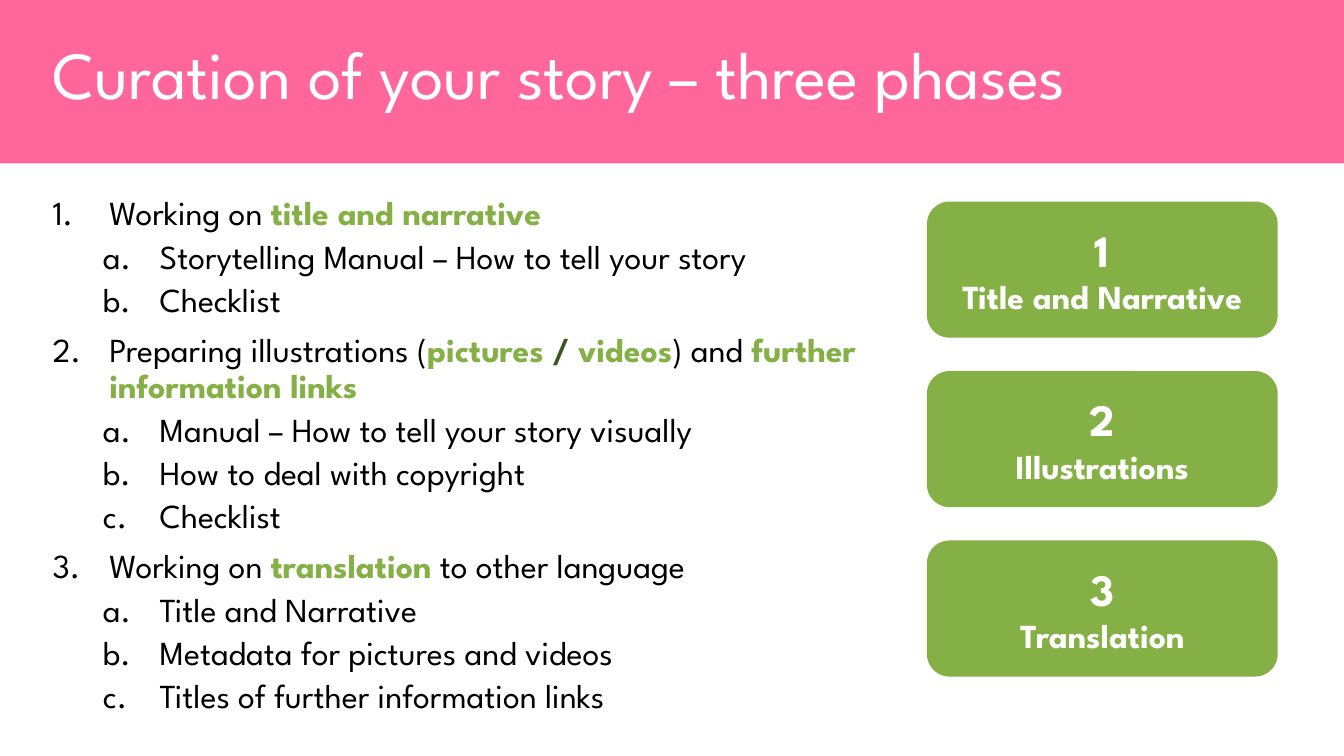
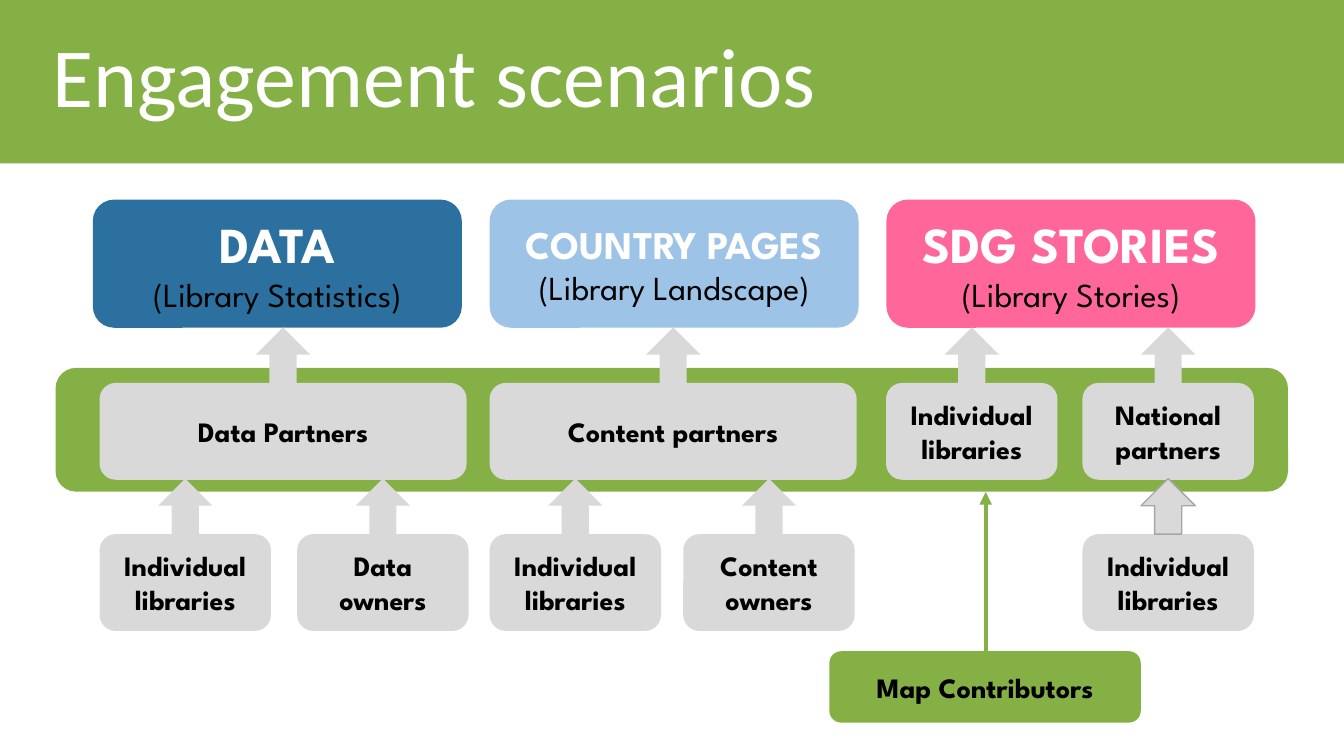
from lxml import etree
from pptx import Presentation
from pptx.dml.color import RGBColor
from pptx.enum import shapes as sh, text as tx
from pptx.oxml import ns
from pptx.util import Cm, Pt

# Colours and fonts
PINK = RGBColor(0xFF, 0x66, 0x99)
GREEN = RGBColor(0x85, 0xB0, 0x46)
FOREST = RGBColor(0x38, 0x57, 0x23)
BLUE = RGBColor(0x2B, 0x70, 0x9E)
SKY = RGBColor(0x9D, 0xC3, 0xE6)
GREY = RGBColor(0xD9, 0xD9, 0xD9)
EDGE = RGBColor(0xA6, 0xA6, 0xA6)
BLACK = RGBColor(0, 0, 0)
WHITE = RGBColor(0xFF, 0xFF, 0xFF)
SPARTAN = "League Spartan"
WIDE, HIGH = 33.87, 19.05

# Each item: level, then plain text or (text, colour) for bold words
PHASES = [
    (0, "Working on ", ("title and narrative", GREEN)),
    (1, "Storytelling Manual – How to tell your story"),
    (1, "Checklist"),
    (0, "Preparing illustrations (", ("pictures", GREEN), (" / ", FOREST),
     ("videos", GREEN), ") and ", ("further information links", GREEN)),
    (1, "Manual – How to tell your story visually"),
    (1, "How to deal with copyright"),
    (1, "Checklist"),
    (0, "Working on ", ("translation", GREEN), " to other language"),
    (1, "Title and Narrative"),
    (1, "Metadata for pictures and videos"),
    (1, "Titles of further information links"),
]


def style(font, size, color, bold=False, name=SPARTAN):
    font.name, font.size, font.bold = name, Pt(size), bold
    font.color.rgb = color


def place(item, left, top, width, height):
    item.left, item.top = Cm(left), Cm(top)
    item.width, item.height = Cm(width), Cm(height)


def add_box(slide, kind, left, top, width, height, fill, lines=()):
    """Add a filled shape; lines holds (words, size, colour, bold)."""
    box = slide.shapes.add_shape(
        kind, Cm(left), Cm(top), Cm(width), Cm(height))
    box.shadow.inherit = False
    box.fill.solid()
    box.fill.fore_color.rgb = fill
    box.line.fill.background()
    frame = box.text_frame
    frame.word_wrap = True
    frame.vertical_anchor = tx.MSO_ANCHOR.MIDDLE
    for i, (words, *look) in enumerate(lines):
        par = frame.add_paragraph() if i else frame.paragraphs[0]
        par.text = words
        par.alignment = tx.PP_ALIGN.CENTER
        style(par.font, *look)
    return box


def add_round(slide, *args):
    return add_box(slide, sh.MSO_SHAPE.ROUNDED_RECTANGLE, *args)


def add_up(slide, mid, top):
    width = 1.37
    return add_box(slide, sh.MSO_SHAPE.UP_ARROW, mid - width / 2, top,
                   width, 1.4, GREY)


def add_line(slide, mid, start, end):
    line = slide.shapes.add_connector(
        sh.MSO_CONNECTOR.STRAIGHT, Cm(mid), Cm(start), Cm(mid), Cm(end))
    line.line.color.rgb = GREEN
    line.line.width = Pt(3)
    etree.SubElement(line.line._ln, ns.qn("a:tailEnd"), type="triangle")
    etree.SubElement(line._element.spPr, ns.qn("a:effectLst"))


def add_slide(deck, layout, words, band, size, name, area):
    """Start a slide with its colour band and title."""
    slide = deck.slides.add_slide(deck.slide_layouts[layout])
    back = add_box(slide, sh.MSO_SHAPE.RECTANGLE, 0, 0, WIDE, 4.12, band)
    slide.shapes._spTree.insert(2, back._element)
    title = slide.shapes.title
    place(title, *area)
    frame = title.text_frame
    frame.text = words
    frame.word_wrap = True
    frame.auto_size = tx.MSO_AUTO_SIZE.NONE
    frame.vertical_anchor = tx.MSO_ANCHOR.MIDDLE
    par = frame.paragraphs[0]
    par.alignment = tx.PP_ALIGN.LEFT
    par.line_spacing = 0.9
    style(par.font, size, WHITE, name=name)
    return slide


def number(par, level):
    """Give a paragraph its number or letter and hanging indent."""
    props = par._p.get_or_add_pPr()
    props.set("marL", str(Cm((1.43, 2.7)[level])))
    props.set("indent", str(Cm(-1.43)))
    etree.SubElement(props, ns.qn("a:buFont"), typeface=SPARTAN)
    etree.SubElement(props, ns.qn("a:buAutoNum"),
                     type=("arabicPeriod", "alphaLcPeriod")[level])


def fill_list(body, items):
    frame = body.text_frame
    frame.auto_size = tx.MSO_AUTO_SIZE.NONE
    for i, (level, *parts) in enumerate(items):
        par = frame.add_paragraph() if i else frame.paragraphs[0]
        par.level = level
        number(par, level)
        par.line_spacing = 0.9
        par.space_before = Pt((10, 5)[level])
        style(par.font, 24, BLACK)
        for part in parts:
            run = par.add_run()
            if isinstance(part, str):
                run.text = part
            else:
                run.text, run.font.color.rgb = part
                run.font.bold = True


def add_phases(deck):
    slide = add_slide(deck, 1, "Curation of your story – three phases", PINK,
                      48, SPARTAN, (1.07, 0.71, 31.14, 2.5))
    body = slide.placeholders[1]
    place(body, 1.07, 4.83, 21.67, 12.09)
    fill_list(body, PHASES)
    names = ("Title and Narrative", "Illustrations", "Translation")
    for i, name in enumerate(names):
        add_round(slide, 23.36, 5.08 + 4.27 * i, 8.84, 3.43, GREEN,
                  [(str(i + 1), 32, WHITE, True), (name, 24, WHITE, True)])


def add_roles(deck):
    slide = add_slide(deck, 5, "Engagement scenarios", GREEN,
                      60, "Calibri", (1.07, 0.51, 23.09, 3.05))

    # Three content areas
    areas = [("DATA", 36, "(Library Statistics)", BLUE),
             ("COUNTRY PAGES", 28, "(Library Landscape)", SKY),
             ("SDG STORIES", 36, "(Library Stories)", PINK)]
    for i, (head, size, sub, fill) in enumerate(areas):
        add_round(slide, 2.34 + 10 * i, 5.03, 9.3, 3.23, fill,
                  [(head, size, WHITE, True), (sub, 24, BLACK)])

    # Contributors and the band they feed
    add_round(slide, 1.4, 9.27, 31.06, 3.12, GREEN)
    add_round(slide, 20.9, 16.41, 7.85, 1.8, GREEN,
              [("Map Contributors", 20, BLACK, True)])
    add_line(slide, 24.84, 16.41, 12.4)

    # Partners above, their sources below, each with an arrow up
    slim, broad = 4.32, 9.25
    upper = [(2.51, broad, "Data Partners"),
             (12.34, broad, "Content partners"),
             (22.33, slim, "Individual libraries"),
             (27.28, slim, "National partners")]
    lower = [(2.51, slim, "Individual libraries"),
             (7.49, slim, "Data owners"),
             (12.34, slim, "Individual libraries"),
             (17.22, slim, "Content owners"),
             (27.28, slim, "Individual libraries")]
    for top, row in ((9.65, upper), (13.46, lower)):
        for left, width, name in row:
            add_round(slide, left, top, width, 2.44, GREY,
                      [(name, 20, BLACK, True)])
            arrow = add_up(slide, left + width / 2, top - 1.4)
    # The last source's arrow is outlined
    arrow.line.color.rgb = EDGE
    arrow.line.width = Pt(1)


def main():
    deck = Presentation()
    deck.slide_width, deck.slide_height = Cm(WIDE), Cm(HIGH)
    add_phases(deck)
    add_roles(deck)
    deck.save("out.pptx")


if __name__ == "__main__":
    main()
